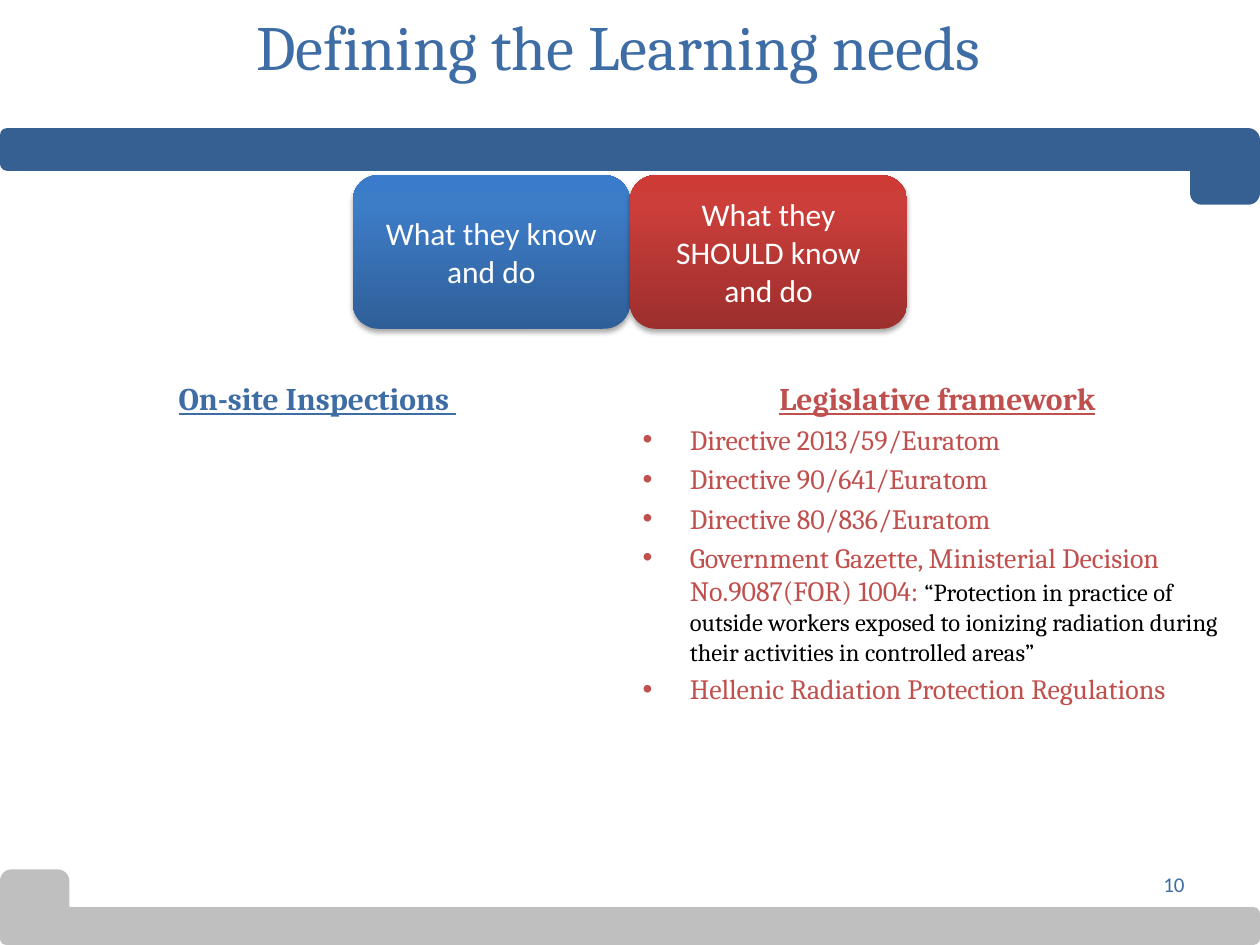
from copy import deepcopy
from dataclasses import dataclass

from lxml import etree
from pptx import Presentation
from pptx.dml.color import RGBColor
from pptx.enum import shapes, text
from pptx.oxml import ns
from pptx.util import Pt


@dataclass(frozen=True)
class Theme:
    serif: str = "Cambria"
    sans: str = "Calibri"
    blue: str = "3E6CA4"
    red: str = "C0504D"
    black: str = "000000"
    white: str = "FFFFFF"
    top_bar: str = "376092"
    bottom_bar: str = "BFBFBF"
    blue_gradient: tuple = ((0, "2F5F99"), (0.8, "3D7CC7"), (1, "3A7CCB"))
    red_gradient: tuple = ((0, "9C2F2D"), (0.8, "CB3E3A"), (1, "CE3B37"))
    title_size: int = 36
    heading_size: int = 18
    bullet_size: int = 16
    quote_size: int = 14
    number_size: int = 12


class SlideBuilder:
    def __init__(self, slide, theme):
        self.slide = slide
        self.theme = theme

    def place(self, shape, box):
        shape.left, shape.top, shape.width, shape.height = map(Pt, box)

    def style(self, font, name, size, color, bold=False, underline=False):
        font.name = name
        font.size = Pt(size)
        font.bold = bold
        font.underline = underline
        font.color.rgb = RGBColor.from_string(color)

    def label(self, shape, wording, alignment, anchor, name, size, color):
        frame = shape.text_frame
        frame.text = wording
        frame.word_wrap = True
        frame.vertical_anchor = anchor
        paragraph = frame.paragraphs[0]
        paragraph.alignment = alignment
        self.style(paragraph.runs[0].font, name, size, color)

    def title(self, box, wording):
        shape = self.slide.shapes.title
        self.place(shape, box)
        self.label(shape, wording, text.PP_ALIGN.CENTER, text.MSO_ANCHOR.TOP,
                   self.theme.serif, self.theme.title_size, self.theme.blue)

    def rounded(self, box):
        shape = self.slide.shapes.add_shape(
            shapes.MSO_SHAPE.ROUNDED_RECTANGLE, *map(Pt, box))
        shape.shadow.inherit = False
        shape.line.fill.background()
        return shape

    def bar(self, box, color):
        shape = self.rounded(box)
        shape.fill.solid()
        shape.fill.fore_color.rgb = RGBColor.from_string(color)

    def card(self, box, wording, gradient):
        shape = self.rounded(box)
        shape.fill.gradient()
        shape.fill.gradient_angle = 90
        stop_list = shape._element.spPr.find(".//" + ns.qn("a:gsLst"))
        stop_list.insert(1, deepcopy(stop_list[0]))
        for stop, (position, color) in zip(shape.fill.gradient_stops, gradient):
            stop.position = position
            stop.color.rgb = RGBColor.from_string(color)
        self.drop_shadow(shape)
        self.label(shape, wording, text.PP_ALIGN.CENTER, text.MSO_ANCHOR.MIDDLE,
                   self.theme.sans, self.theme.heading_size, self.theme.white)

    def drop_shadow(self, shape):
        effects = shape._element.spPr.find(ns.qn("a:effectLst"))
        shadow = etree.SubElement(
            effects, ns.qn("a:outerShdw"), blurRad=str(Pt(3.1)),
            dist=str(Pt(1.8)), dir="5400000", rotWithShape="0")
        color = etree.SubElement(shadow, ns.qn("a:srgbClr"), val=self.theme.black)
        etree.SubElement(color, ns.qn("a:alpha"), val="35000")

    def column(self, index, box, heading, color, bullets=()):
        shape = self.slide.placeholders[index]
        self.place(shape, box)
        frame = shape.text_frame
        frame.auto_size = text.MSO_AUTO_SIZE.NONE
        frame.text = heading
        paragraph = frame.paragraphs[0]
        self.indent(paragraph, 0, 0, "a:buNone")
        paragraph.alignment = text.PP_ALIGN.CENTER
        paragraph.space_before = Pt(0)
        self.style(paragraph.runs[0].font, self.theme.serif,
                   self.theme.heading_size, color, bold=True, underline=True)
        for wording, quote in bullets:
            paragraph = frame.add_paragraph()
            self.indent(paragraph, 27, -27, "a:buChar", char="•")
            paragraph.text = wording
            self.style(paragraph.runs[0].font, self.theme.serif,
                       self.theme.bullet_size, color)
            if quote:
                run = paragraph.add_run()
                run.text = quote
                self.style(run.font, self.theme.serif,
                           self.theme.quote_size, self.theme.black)

    def indent(self, paragraph, margin, first_line, bullet, **attributes):
        properties = paragraph._p.get_or_add_pPr()
        properties.set("marL", str(Pt(margin)))
        properties.set("indent", str(Pt(first_line)))
        etree.SubElement(properties, ns.qn(bullet), **attributes)

    def page_number(self, box, wording):
        shape = self.slide.shapes.add_textbox(*map(Pt, box))
        self.label(shape, wording, text.PP_ALIGN.RIGHT, text.MSO_ANCHOR.MIDDLE,
                   self.theme.sans, self.theme.number_size, self.theme.blue)


def main():
    theme = Theme()
    presentation = Presentation()
    presentation.slide_width, presentation.slide_height = Pt(720), Pt(540)
    slide = presentation.slides.add_slide(presentation.slide_layouts[3])
    builder = SlideBuilder(slide, theme)

    builder.bar((0, 73.2, 714.5, 24.5), theme.top_bar)
    builder.bar((680, 73.2, 40, 43.8), theme.top_bar)
    builder.bar((0, 518.4, 720, 21.6), theme.bottom_bar)
    builder.bar((0, 496.8, 39.6, 41), theme.bottom_bar)

    builder.title((29.5, 0.7, 648, 72.7), "Defining the Learning needs")
    builder.page_number((516.2, 491, 167.8, 28.8), "10")

    card_width = 158.4
    cards = (
        ("What they know and do", theme.blue_gradient),
        ("What they SHOULD know and do", theme.red_gradient),
    )
    for position, (wording, gradient) in enumerate(cards):
        left = 360 + (position - 1) * card_width
        builder.card((left, 100.1, card_width, 87.8), wording, gradient)

    builder.column(1, (8.6, 213.1, 345.6, 289.4), "On-site Inspections ", theme.blue)
    builder.column(2, (360, 213.1, 351.4, 209.5), "Legislative framework", theme.red, (
        ("Directive 2013/59/Euratom", ""),
        ("Directive 90/641/Euratom", ""),
        ("Directive 80/836/Euratom", ""),
        ("Government Gazette, Ministerial Decision No.9087(FOR) 1004: ",
         "“Protection in practice of outside workers exposed to ionizing "
         "radiation during their activities in controlled areas”"),
        ("Hellenic Radiation Protection Regulations", ""),
    ))
    presentation.save("out.pptx")


if __name__ == "__main__":
    main()
